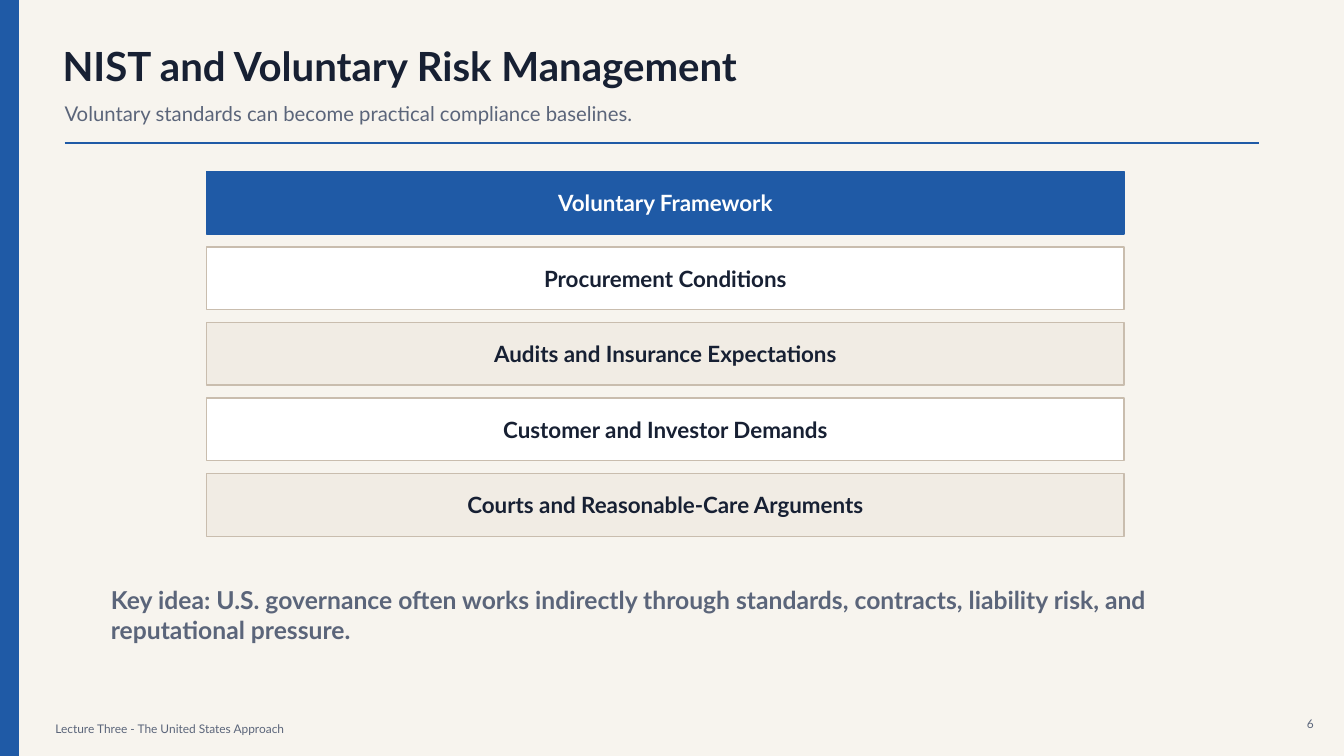
from pptx import Presentation
from pptx.dml.color import RGBColor
from pptx.enum.shapes import MSO_CONNECTOR, MSO_SHAPE
from pptx.enum.text import MSO_ANCHOR, MSO_AUTO_SIZE, PP_ALIGN
from pptx.oxml.ns import qn
from pptx.util import Inches, Pt
from lxml import etree

RECT = MSO_SHAPE.RECTANGLE
LEFT, CENTER, RIGHT = PP_ALIGN.LEFT, PP_ALIGN.CENTER, PP_ALIGN.RIGHT
FONT = "Lato"
HUES = {"paper": "F7F4EE", "blue": "1F5AA6", "ink": "172033", "slate": "5B657A",
        "white": "FFFFFF", "sand": "F1ECE4", "tan": "C9BDAE"}
RGB = {name: RGBColor.from_string(code) for name, code in HUES.items()}

prs = Presentation()
prs.slide_width, prs.slide_height = Inches(13.33), Inches(7.5)
slide = prs.slides.add_slide(prs.slide_layouts[5])
slide.background.fill.solid()
slide.background.fill.fore_color.rgb = RGB["paper"]


def write(text, box=None, at=None, size=16, color="slate", bold=False, align=LEFT):
    """Put text in box, or in a new text box; at is left, top, width, height."""
    if box is None:
        box = slide.shapes.add_textbox(*map(Inches, at))
    elif at:
        box.left, box.top, box.width, box.height = map(Inches, at)
    frame = box.text_frame
    frame.word_wrap = True
    frame.auto_size = MSO_AUTO_SIZE.NONE
    frame.vertical_anchor = MSO_ANCHOR.MIDDLE
    frame.margin_left = frame.margin_right = frame.margin_top = frame.margin_bottom = 0
    para = frame.paragraphs[0]
    para.alignment = align
    run = para.add_run()
    run.text = text
    run.font.name, run.font.size, run.font.bold = FONT, Pt(size), bold
    run.font.color.rgb = RGB[color]


def block(at, fill, edge):
    """Add a filled rectangle with a thin outline."""
    shape = slide.shapes.add_shape(RECT, *map(Inches, at))
    shape.shadow.inherit = False
    shape.fill.solid()
    shape.fill.fore_color.rgb = RGB[fill]
    shape.line.color.rgb = RGB[edge]
    shape.line.width = Pt(1)
    return shape


# Frame of the slide: side bar, footer, heading
block((0, 0, 0.18, 7.5), "blue", "blue")
write("Lecture Three - The United States Approach", at=(0.55, 7.13, 9, 0.2), size=8.5)
write("6", at=(12.75, 7.08, 0.28, 0.2), size=8.5, align=RIGHT)
write("NIST and Voluntary Risk Management", box=slide.shapes.title,
      at=(0.62, 0.42, 9.8, 0.45), size=28.7, color="ink", bold=True)
write("Voluntary standards can become practical compliance baselines.",
      at=(0.64, 0.95, 10.9, 0.35), size=14.5)

rule = slide.shapes.add_connector(MSO_CONNECTOR.STRAIGHT, Inches(0.64), Inches(1.42),
                                  Inches(12.49), Inches(1.42))
rule.line.color.rgb = RGB["blue"]
rule.line.width = Pt(1.25)
etree.SubElement(rule._element.spPr, qn("a:effectLst"))

# Stack of bands
bands = [
    ("Voluntary Framework", "blue", "blue", "white"),
    ("Procurement Conditions", "white", "tan", "ink"),
    ("Audits and Insurance Expectations", "sand", "tan", "ink"),
    ("Customer and Investor Demands", "white", "tan", "ink"),
    ("Courts and Reasonable-Care Arguments", "sand", "tan", "ink"),
]
for row, (label, fill, edge, color) in enumerate(bands):
    band = block((2.05, 1.7 + 0.75 * row, 9.1, 0.62), fill, edge)
    write(label, box=band, color=color, bold=True, align=CENTER)

write("Key idea: U.S. governance often works indirectly through standards, contracts, "
      "liability risk, and reputational pressure.",
      at=(1.1, 5.82, 10.6, 0.55), size=17.6, bold=True)

prs.save("out.pptx")
